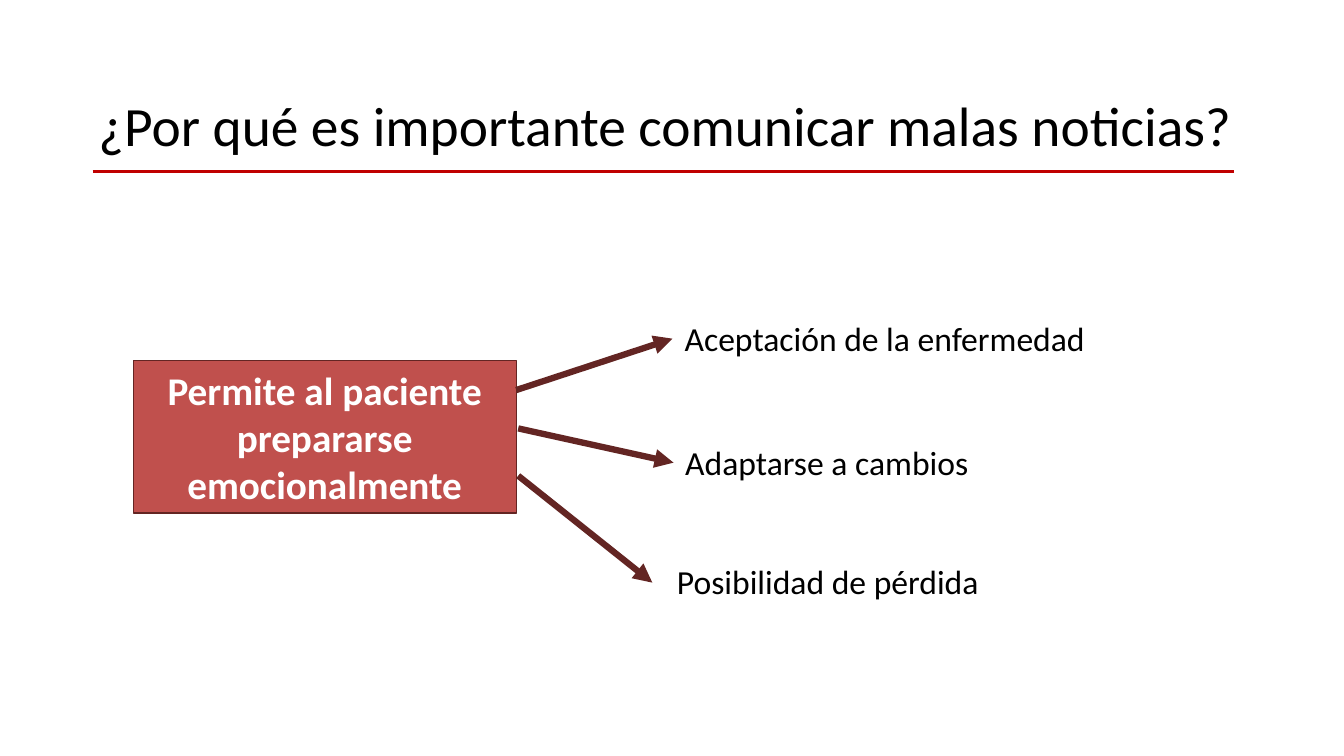
from dataclasses import dataclass

from lxml import etree
from pptx import Presentation
from pptx.dml.color import RGBColor
from pptx.enum.shapes import MSO_CONNECTOR, MSO_SHAPE
from pptx.enum.text import MSO_ANCHOR, PP_ALIGN
from pptx.oxml.ns import qn
from pptx.util import Inches, Pt

STRAIGHT = MSO_CONNECTOR.STRAIGHT
RECTANGLE = MSO_SHAPE.RECTANGLE
TOP, MIDDLE = MSO_ANCHOR.TOP, MSO_ANCHOR.MIDDLE
CENTER = PP_ALIGN.CENTER
LEFT_SIDE = 1


@dataclass(frozen=True)
class Theme:
    font: str = "Calibri"
    text: RGBColor = RGBColor(0x00, 0x00, 0x00)
    inverse: RGBColor = RGBColor(0xFF, 0xFF, 0xFF)
    box: RGBColor = RGBColor(0xC0, 0x50, 0x4D)
    dark: RGBColor = RGBColor(0x63, 0x25, 0x23)
    rule: RGBColor = RGBColor(0xC0, 0x00, 0x00)
    title_size: float = 39.6
    cause_size: float = 28
    effect_size: float = 24
    border_width: float = 0.75
    rule_width: float = 2.25
    arrow_width: float = 4.5


THEME = Theme()


def set_text(sp, text, size, color, anchor=TOP, bold=False):
    tf = sp.text_frame
    tf.word_wrap = True
    tf.vertical_anchor = anchor
    tf.text = text
    p = tf.paragraphs[0]
    p.alignment = CENTER
    font = p.runs[0].font
    font.name = THEME.font
    font.size = Pt(size)
    font.bold = bold
    font.color.rgb = color


def add_text(slide, box, text, size, anchor=TOP):
    sp = slide.shapes.add_textbox(*map(Inches, box))
    set_text(sp, text, size, THEME.text, anchor)
    return sp


def add_line(slide, start, end, color, width, arrow=False):
    line = slide.shapes.add_connector(STRAIGHT, *map(Inches, start + end))
    line.line.color.rgb = color
    line.line.width = Pt(width)
    if arrow:
        ln = line.line._get_or_add_ln()
        etree.SubElement(ln, qn("a:tailEnd"), type="triangle")
    etree.SubElement(line._element.spPr, qn("a:effectLst"))
    return line


def add_title(slide, box, text):
    left, top, width, height = box
    add_text(slide, box, text, THEME.title_size, MIDDLE)
    y = top + 1.19
    add_line(slide, (left + 0.52, y), (left + width - 0.55, y),
             THEME.rule, THEME.rule_width)


def add_cause(slide, box, text):
    sp = slide.shapes.add_shape(RECTANGLE, *map(Inches, box))
    sp.shadow.inherit = False
    sp.fill.solid()
    sp.fill.fore_color.rgb = THEME.box
    sp.line.color.rgb = THEME.dark
    sp.line.width = Pt(THEME.border_width)
    set_text(sp, text, THEME.cause_size, THEME.inverse, bold=True)


def add_effects(slide, box, effects):
    left, top, _, height = box
    for text, (dx, dy, width), start, tip, joined in effects:
        label = add_text(slide, (left + dx, top + dy, width, height),
                         text, THEME.effect_size)
        arrow = add_line(slide, (left + start[0], top + start[1]),
                         (left + tip[0], top + tip[1]),
                         THEME.dark, THEME.arrow_width, arrow=True)
        if joined:
            arrow.end_connect(label, LEFT_SIDE)


def main():
    prs = Presentation()
    prs.slide_width, prs.slide_height = Inches(13.33), Inches(7.5)
    slide = prs.slides.add_slide(prs.slide_layouts[6])
    add_title(slide, (0.4, 0.51, 12.39, 1.45),
              "¿Por qué es importante comunicar malas noticias?")
    add_cause(slide, (1.32, 3.58, 3.8, 1.51),
              "Permite al paciente prepararse emocionalmente")
    effects = [
        ("Aceptación de la enfermedad", (1.55, 0, 4.21),
         (0, 0.77), (1.55, 0.26), True),
        ("Adaptarse a cambios", (1.39, 1.23, 3.38),
         (0.02, 1.15), (1.56, 1.49), False),
        ("Posibilidad de pérdida", (1.35, 2.42, 3.48),
         (0.02, 1.62), (1.35, 2.68), True),
    ]
    add_effects(slide, (5.12, 3.1, 5.76, 0.52), effects)
    prs.save("out.pptx")


if __name__ == "__main__":
    main()
